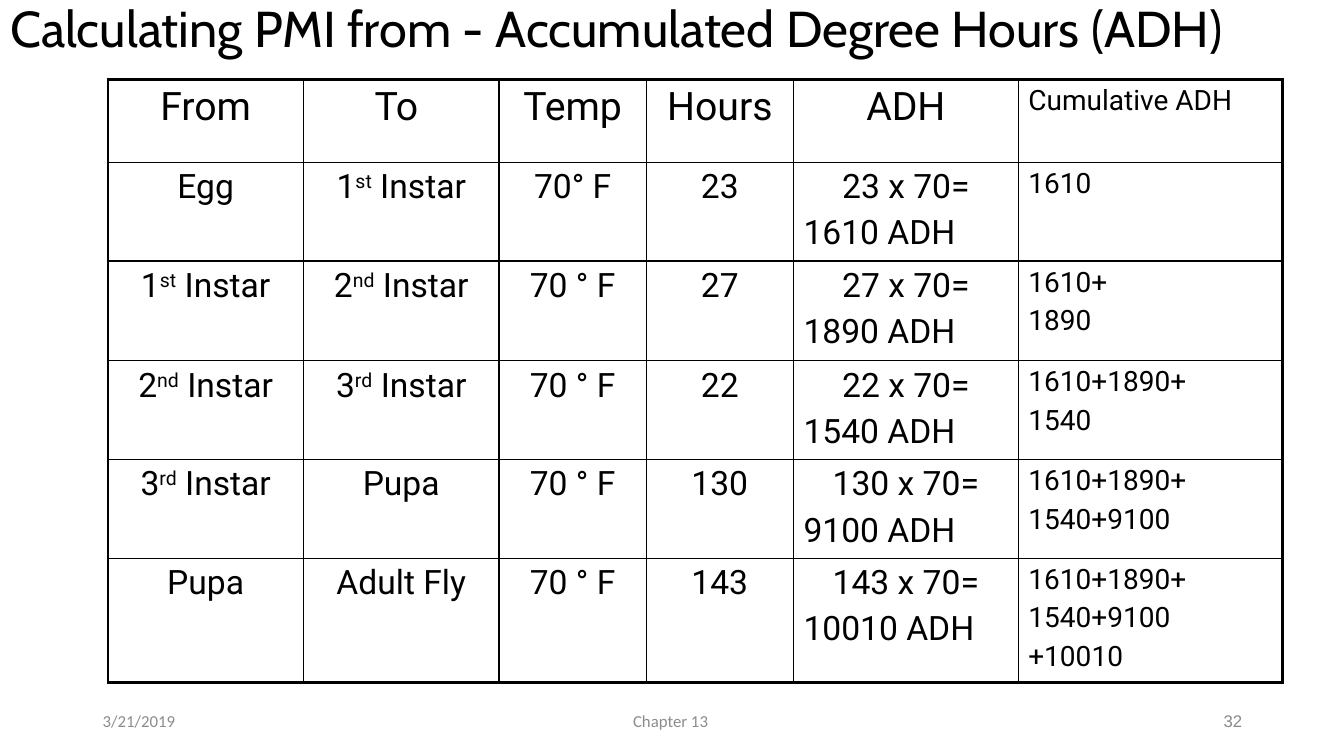
from dataclasses import dataclass

from lxml import etree
from pptx import Presentation
from pptx import util as u
from pptx.dml.color import RGBColor
from pptx.enum import text
from pptx.oxml import ns

BLACK = RGBColor(0x00, 0x00, 0x00)
GREY = RGBColor(0x8C, 0x8C, 0x8C)
NUMBER_GREY = RGBColor(0x89, 0x89, 0x89)
LEFT, CENTER, RIGHT = (text.PP_ALIGN.LEFT, text.PP_ALIGN.CENTER,
                       text.PP_ALIGN.RIGHT)
THIN, THICK = u.Pt(1), u.Pt(2.25)
TEMPERATURE = 70
COL_WIDTHS = (1.94, 1.94, 1.46, 1.46, 2.23, 2.62)
ROW_HEIGHTS = (0.82, 0.98, 0.99, 0.98, 0.98, 1.23)
HEADERS = ("From", "To ", "Temp", "Hours", "ADH", "Cumulative ADH")
ADH_COL = HEADERS.index("ADH")
CUMULATIVE_COL = HEADERS.index("Cumulative ADH")


@dataclass(frozen=True)
class Stage:
    start: str
    end: str
    temp: str
    hours: int
    cumulative: str

    def cells(self) -> tuple[str, ...]:
        adh = (f"{self.hours} x {TEMPERATURE}=\n"
               f"{self.hours * TEMPERATURE} ADH")
        return (self.start, self.end, self.temp, str(self.hours), adh,
                self.cumulative)


@dataclass(frozen=True)
class Footer:
    label: str
    left: float
    width: float
    align: text.PP_ALIGN
    font: str
    color: RGBColor


STAGES = (
    Stage("Egg", "1^st^ Instar", "70° F", 23, "1610"),
    Stage("1^st^ Instar", "2^nd^ Instar", "70 ° F", 27, "1610+\n1890"),
    Stage("2^nd^ Instar", "3^rd^ Instar", "70 ° F", 22, "1610+1890+\n1540"),
    Stage("3^rd^ Instar", "Pupa", "70 ° F", 130, "1610+1890+\n1540+9100"),
    Stage("Pupa", "Adult Fly", "70 ° F", 143,
          "1610+1890+\n1540+9100\n+10010"),
)
FOOTERS = (
    Footer("3/21/2019", 0.92, 3, LEFT, "Calibri", GREY),
    Footer("32", 9.42, 3, RIGHT, "Arial", NUMBER_GREY),
    Footer("Chapter 13 ", 4.42, 4.5, CENTER, "Calibri", GREY),
)


def style(p, align: text.PP_ALIGN, font: str, size: float,
          color: RGBColor) -> None:
    p.alignment = align
    p.font.name = font
    p.font.size = u.Pt(size)
    p.font.color.rgb = color


def set_space_before(p, percent: int) -> None:
    p.space_before = u.Pt(0)
    spacing = p._p.pPr.find(ns.qn("a:spcBef"))
    spacing.remove(spacing[0])
    etree.SubElement(spacing, ns.qn("a:spcPct"), val=str(percent * 1000))


def add_superscripted(p, marked: str) -> None:
    for i, part in enumerate(marked.split("^")):
        r = p.add_run()
        r.text = part
        if i % 2:
            r._r.get_or_add_rPr().set("baseline", "30000")


def set_borders(cell, widths: dict[str, int]) -> None:
    tc_pr = cell._tc.get_or_add_tcPr()
    for i, (side, width) in enumerate(widths.items()):
        ln = etree.Element(ns.qn(f"a:ln{side}"), w=str(width))
        fill = etree.SubElement(ln, ns.qn("a:solidFill"))
        etree.SubElement(fill, ns.qn("a:srgbClr"), val=str(BLACK))
        tc_pr.insert(i, ln)


def fill_cell(cell, content: str, row: int, col: int) -> None:
    cell.fill.background()
    size = 20 if col == CUMULATIVE_COL else 28 if row == 0 else 24
    tf = cell.text_frame
    for i, line in enumerate(content.split("\n")):
        p = tf.add_paragraph() if i else tf.paragraphs[0]
        add_superscripted(p, line)
        second_adh_line = col == ADH_COL and i > 0
        align = LEFT if col == CUMULATIVE_COL or second_adh_line else CENTER
        style(p, align, "Roboto", size, BLACK)
        set_space_before(p, 20)
    set_borders(cell, {
        "L": THICK if col == 0 else THIN,
        "R": THICK if col == len(COL_WIDTHS) - 1 else THIN,
        "T": THICK if row == 0 else THIN,
        "B": THICK if row == len(ROW_HEIGHTS) - 1 else THIN,
    })


def add_title(s) -> None:
    sp = s.shapes.title
    sp.left, sp.top = u.Inches(0), u.Inches(0)
    sp.width, sp.height = u.Inches(13.23), u.Inches(0.62)
    tf = sp.text_frame
    tf.text = "Calculating PMI from - Accumulated Degree Hours (ADH)"
    tf.auto_size = text.MSO_AUTO_SIZE.NONE
    tf.vertical_anchor = text.MSO_ANCHOR.MIDDLE
    p = tf.paragraphs[0]
    style(p, LEFT, "Cabin", 36, BLACK)
    p.line_spacing = 0.9


def add_stage_table(s) -> None:
    rows = (HEADERS, *(stage.cells() for stage in STAGES))
    table = s.shapes.add_table(
        len(rows), len(HEADERS), u.Inches(1.07), u.Inches(0.79),
        u.Inches(sum(COL_WIDTHS)), u.Inches(sum(ROW_HEIGHTS))).table
    table.first_row = False
    table.horz_banding = False
    for column, width in zip(table.columns, COL_WIDTHS):
        column.width = u.Inches(width)
    for row, height in zip(table.rows, ROW_HEIGHTS):
        row.height = u.Inches(height)
    for i, row in enumerate(rows):
        for j, content in enumerate(row):
            fill_cell(table.cell(i, j), content, i, j)


def add_footer(s, footer: Footer) -> None:
    sp = s.shapes.add_textbox(u.Inches(footer.left), u.Inches(6.95),
                              u.Inches(footer.width), u.Inches(0.4))
    tf = sp.text_frame
    tf.word_wrap = True
    tf.vertical_anchor = text.MSO_ANCHOR.MIDDLE
    tf.text = footer.label
    style(tf.paragraphs[0], footer.align, footer.font, 12, footer.color)


def main() -> None:
    prs = Presentation()
    prs.slide_width, prs.slide_height = u.Inches(13.33), u.Inches(7.5)
    s = prs.slides.add_slide(prs.slide_layouts.get_by_name("Title Only"))
    add_title(s)
    add_stage_table(s)
    for footer in FOOTERS:
        add_footer(s, footer)
    prs.save("out.pptx")


if __name__ == "__main__":
    main()
